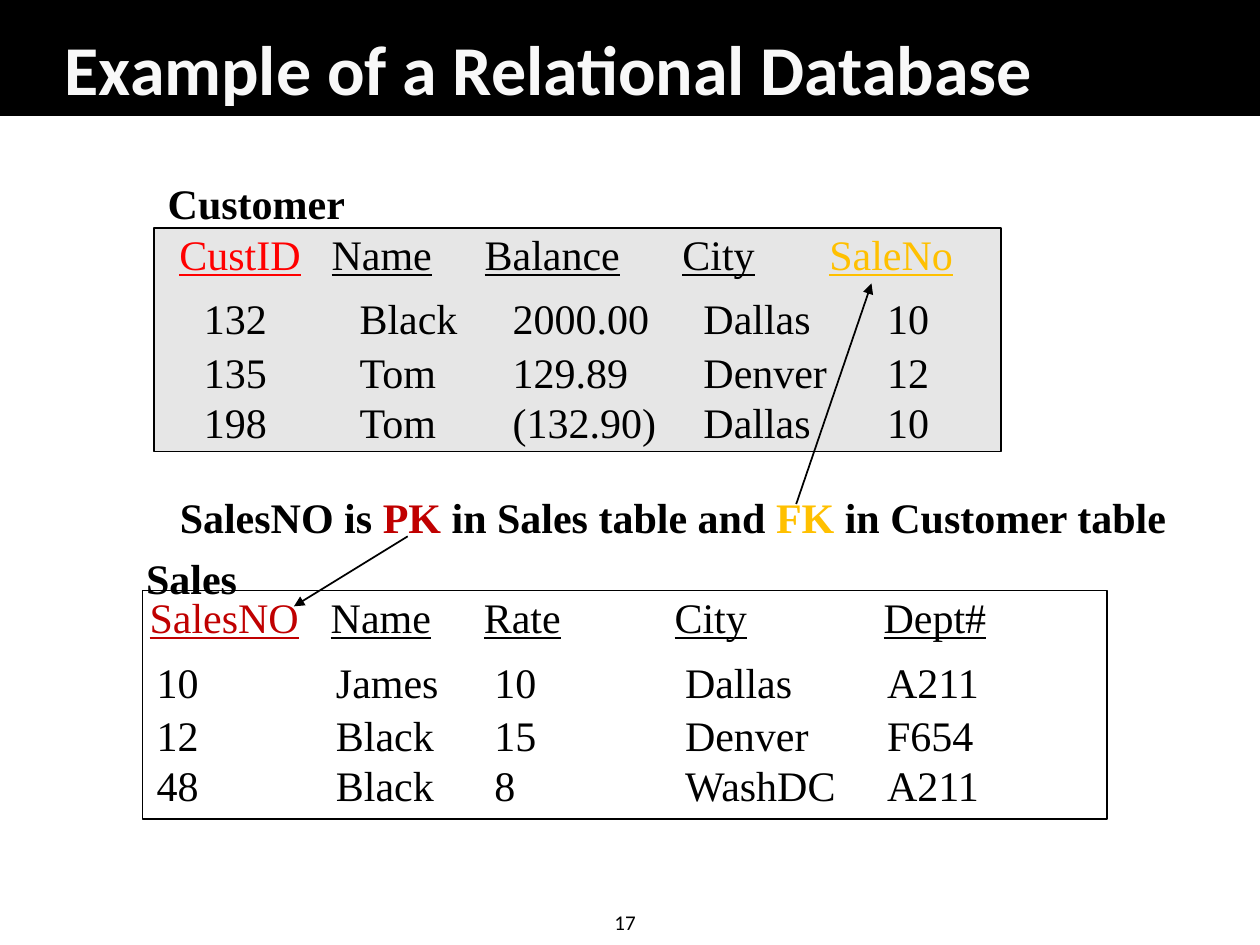
"""Build a slide that explains primary and foreign keys with two related tables."""
from dataclasses import dataclass
from typing import Optional

from lxml import etree
from pptx import Presentation
from pptx import util as u
from pptx.dml.color import RGBColor
from pptx.enum import shapes, text
from pptx.oxml.ns import qn

BLACK = RGBColor(0x00, 0x00, 0x00)
WHITE = RGBColor(0xF8, 0xF8, 0xF8)
GREY = RGBColor(0xE6, 0xE6, 0xE6)
RED = RGBColor(0xFF, 0x00, 0x00)
DARK_RED = RGBColor(0xC0, 0x00, 0x00)
GOLD = RGBColor(0xFF, 0xC0, 0x00)
SERIF = "Times New Roman"
SANS = "Calibri"
NO_STYLE = "{2D5ABB26-0587-4C30-8999-92F81FD0307C}"
ROW_HEIGHTS = (37, 30.5, 28, 28)
LEFT = text.PP_ALIGN.LEFT
CENTER = text.PP_ALIGN.CENTER


@dataclass(frozen=True)
class Column:
    header: str
    left: float
    inset: float
    values: tuple[str, ...]
    color: RGBColor = BLACK


@dataclass(frozen=True)
class Relation:
    frame: tuple[float, float, float, float]
    fill: Optional[RGBColor]
    top: float
    right: float
    columns: tuple[Column, ...]


@dataclass(frozen=True)
class Arrow:
    start: tuple[float, float]
    end: tuple[float, float]


CUSTOMER = Relation((88, 130.5, 484, 127.5), GREY, 133, 571, (
    Column("CustID", 102.5, 14, ("132", "135", "198"), RED),
    Column("Name", 189.5, 16, ("Black", "Tom", "Tom")),
    Column("Balance", 277, 16, ("2000.00", "129.89", "(132.90)")),
    Column("City", 390, 12, ("Dallas", "Denver", "Dallas")),
    Column("SaleNo", 474, 33, ("10", "12", "10"), GOLD),
))
SALES = Relation((81.5, 337.5, 551, 130.5), None, 340.5, 631, (
    Column("SalesNO", 85.5, 4, ("10", "12", "48"), DARK_RED),
    Column("Name", 189, 3, ("James", "Black", "Black")),
    Column("Rate", 276.5, 6, ("10", "15", "8")),
    Column("City", 385.5, 6, ("Dallas", "Denver", "WashDC")),
    Column("Dept#", 505, 2, ("A211", "F654", "A211")),
))
ARROWS = (
    Arrow((455, 288), (498, 162)),
    Arrow((233, 306.5), (168, 346.5)),
)


def write(paragraph, content: str, *, font: str = SERIF, size: float = 24,
          color: RGBColor = BLACK, bold: bool = False, underline: bool = False) -> None:
    """Append one formatted run to a paragraph."""
    run = paragraph.add_run()
    run.text = content
    run.font.name = font
    run.font.size = u.Pt(size)
    run.font.bold = bold
    run.font.underline = underline
    run.font.color.rgb = color


def add_label(slide, box: tuple[float, float, float, float], *runs: tuple[str, RGBColor],
              align=CENTER, anchor=text.MSO_ANCHOR.TOP, wrap: bool = True, **style) -> None:
    """Add a one-paragraph text box made of coloured runs."""
    frame = slide.shapes.add_textbox(*map(u.Pt, box)).text_frame
    frame.word_wrap = wrap
    frame.vertical_anchor = anchor
    paragraph = frame.paragraphs[0]
    paragraph.alignment = align
    for content, color in runs:
        write(paragraph, content, color=color, **style)


def add_box(slide, box: tuple[float, float, float, float], fill: Optional[RGBColor]) -> None:
    """Add a black-edged rectangle, unfilled when no fill is given."""
    shape = slide.shapes.add_shape(shapes.MSO_SHAPE.RECTANGLE, *map(u.Pt, box))
    shape.shadow.inherit = False
    shape.line.color.rgb = BLACK
    shape.line.width = u.Pt(1)
    if fill is None:
        shape.fill.background()
    else:
        shape.fill.solid()
        shape.fill.fore_color.rgb = fill


def add_relation(slide, relation: Relation) -> None:
    """Draw a framed database table with underlined headers."""
    add_box(slide, relation.frame, relation.fill)
    columns = relation.columns
    edges = [column.left for column in columns] + [relation.right]
    table = slide.shapes.add_table(
        len(ROW_HEIGHTS), len(columns), u.Pt(edges[0]), u.Pt(relation.top),
        u.Pt(edges[-1] - edges[0]), u.Pt(sum(ROW_HEIGHTS))).table
    table.first_row = table.horz_banding = False
    table._tbl.tblPr.find(qn("a:tableStyleId")).text = NO_STYLE
    for row, height in zip(table.rows, ROW_HEIGHTS):
        row.height = u.Pt(height)
    for index, column in enumerate(columns):
        table.columns[index].width = u.Pt(edges[index + 1] - edges[index])
        for row, content in enumerate((column.header, *column.values)):
            header = row == 0
            cell = table.cell(row, index)
            cell.fill.background()
            cell.margin_left = u.Pt(0 if header else column.inset)
            cell.margin_right = cell.margin_top = cell.margin_bottom = 0
            write(cell.text_frame.paragraphs[0], content, underline=header,
                  color=column.color if header else BLACK)


def add_arrow(slide, arrow: Arrow) -> None:
    """Draw a straight black line with a triangle at its end."""
    connector = slide.shapes.add_connector(
        shapes.MSO_CONNECTOR.STRAIGHT, *map(u.Pt, arrow.start + arrow.end))
    connector.line.color.rgb = BLACK
    connector.line.width = u.Pt(1)
    etree.SubElement(connector.line._get_or_add_ln(), qn("a:tailEnd"), type="triangle")
    etree.SubElement(connector._element.spPr, qn("a:effectLst"))


def main() -> None:
    """Create and save the presentation."""
    presentation = Presentation()
    presentation.slide_width = u.Pt(720)
    presentation.slide_height = u.Pt(540)
    slide = presentation.slides.add_slide(presentation.slide_layouts[6])
    add_box(slide, (0, 0, 720, 66), BLACK)
    add_label(slide, (30, 16.5, 634, 49.5), ("Example of a Relational Database", WHITE),
              align=LEFT, anchor=text.MSO_ANCHOR.BOTTOM, font=SANS, size=40, bold=True)
    add_relation(slide, SALES)
    add_label(slide, (76, 312, 67, 36), ("Sales", BLACK), wrap=False, bold=True)
    add_relation(slide, CUSTOMER)
    add_label(slide, (88.5, 98, 116, 36), ("Customer", BLACK), bold=True)
    add_label(slide, (72, 277.5, 625, 36), ("SalesNO is ", BLACK), ("PK ", DARK_RED),
              ("in Sales table and ", BLACK), ("FK ", GOLD), ("in Customer table", BLACK),
              bold=True)
    for arrow in ARROWS:
        add_arrow(slide, arrow)
    add_label(slide, (344, 516, 29.5, 21.5), ("17", BLACK),
              align=LEFT, wrap=False, font=SANS, size=12)
    presentation.save("out.pptx")


if __name__ == "__main__":
    main()
